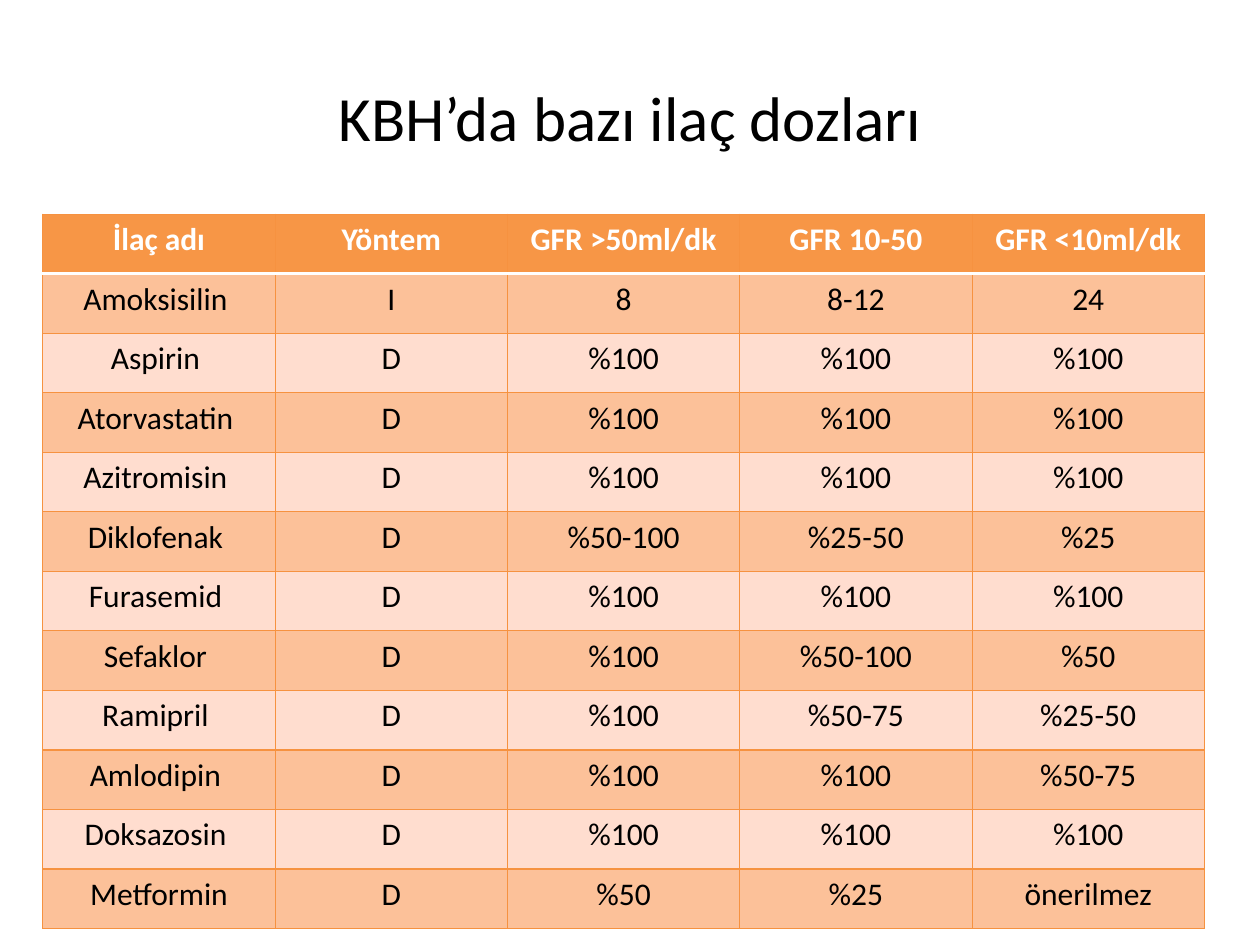
import pptx
import pptx.dml.color
import pptx.enum.text
import pptx.oxml
import pptx.oxml.ns
import pptx.util

Inches = pptx.util.Inches
CENTER = pptx.enum.text.PP_ALIGN.CENTER
MIDDLE = pptx.enum.text.MSO_ANCHOR.MIDDLE

HEADER_FILL, DARK_BAND, LIGHT_BAND = "F79646", "FCC199", "FFDDCF"
GRID = ("F69240", 0.75)
HEADER_RULE = ("FFFFFF", 2)

TITLE_FORMAT = {"name": "Calibri", "size": pptx.util.Pt(36), "bold": False}
HEADER_FORMAT = {"name": "Calibri", "size": pptx.util.Pt(18), "bold": True}
BODY_FORMAT = {**HEADER_FORMAT, "bold": False}

DOSES = [
    ("İlaç adı", "Yöntem", "GFR >50ml/dk", "GFR 10-50", "GFR <10ml/dk"),
    ("Amoksisilin ", "I", "8", "8-12", "24"),
    ("Aspirin ", "D", "%100", "%100", "%100"),
    ("Atorvastatin ", "D", "%100", "%100", "%100"),
    ("Azitromisin ", "D", "%100", "%100", "%100"),
    ("Diklofenak ", "D", "%50-100", "%25-50", "%25"),
    ("Furasemid ", "D", "%100", "%100", "%100"),
    ("Sefaklor ", "D", "%100", "%50-100", "%50"),
    ("Ramipril ", "D", "%100", "%50-75", "%25-50"),
    ("Amlodipin ", "D", "%100", "%100", "%50-75"),
    ("Doksazosin ", "D", "%100", "%100", "%100"),
    ("Metformin", "D", "%50", "%25", "önerilmez"),
]


def rgb(value):
    """Return the colour for a hex string."""
    return pptx.dml.color.RGBColor.from_string(value)


def write_text(tf, text, color, formats):
    """Write one centred, formatted paragraph into a text frame."""
    p = tf.paragraphs[0]
    p.alignment = CENTER
    r = p.add_run()
    r.text = text
    r.font.color.rgb = rgb(color)
    for key, value in formats.items():
        setattr(r.font, key, value)


def add_title(s, text):
    """Add the slide title."""
    sp = s.shapes.add_textbox(Inches(0.5), Inches(0.3), Inches(9), Inches(1.25))
    tf = sp.text_frame
    tf.word_wrap = True
    tf.vertical_anchor = MIDDLE
    write_text(tf, text, "000000", TITLE_FORMAT)


def set_borders(cell, borders):
    """Draw cell borders given as side to (colour, points)."""
    props = cell._tc.get_or_add_tcPr()
    for i, (side, (color, width)) in enumerate(borders.items()):
        line = pptx.oxml.parse_xml(
            f'<a:ln{side} {pptx.oxml.ns.nsdecls("a")} w="{pptx.util.Pt(width)}">'
            f'<a:solidFill><a:srgbClr val="{color}"/></a:solidFill></a:ln{side}>'
        )
        props.insert(i, line)


def format_cell(cell, text, row):
    """Fill, border and write one cell according to its row."""
    header = row == 0
    cell.fill.solid()
    band = DARK_BAND if row % 2 else LIGHT_BAND
    cell.fill.fore_color.rgb = rgb(HEADER_FILL if header else band)
    set_borders(cell, {
        "L": GRID,
        "R": GRID,
        "T": HEADER_RULE if row == 1 else GRID,
        "B": HEADER_RULE if header else GRID,
    })
    write_text(cell.text_frame, text, "FFFFFF" if header else "000000",
               HEADER_FORMAT if header else BODY_FORMAT)


def add_dose_table(s, rows):
    """Add the dose table with equal columns and rows."""
    width, height = Inches(9.22), Inches(5.67)
    table = s.shapes.add_table(len(rows), len(rows[0]), Inches(0.34),
                               Inches(1.7), width, height).table
    for column in table.columns:
        column.width = width // len(rows[0])
    for i, values in enumerate(rows):
        table.rows[i].height = height // len(rows)
        for j, text in enumerate(values):
            format_cell(table.cell(i, j), text, i)


def main():
    """Build and save the slide."""
    prs = pptx.Presentation()
    prs.slide_width, prs.slide_height = Inches(10), Inches(7.5)
    s = prs.slides.add_slide(prs.slide_layouts[6])
    add_title(s, "KBH’da bazı ilaç dozları")
    add_dose_table(s, DOSES)
    prs.save("out.pptx")


if __name__ == "__main__":
    main()
